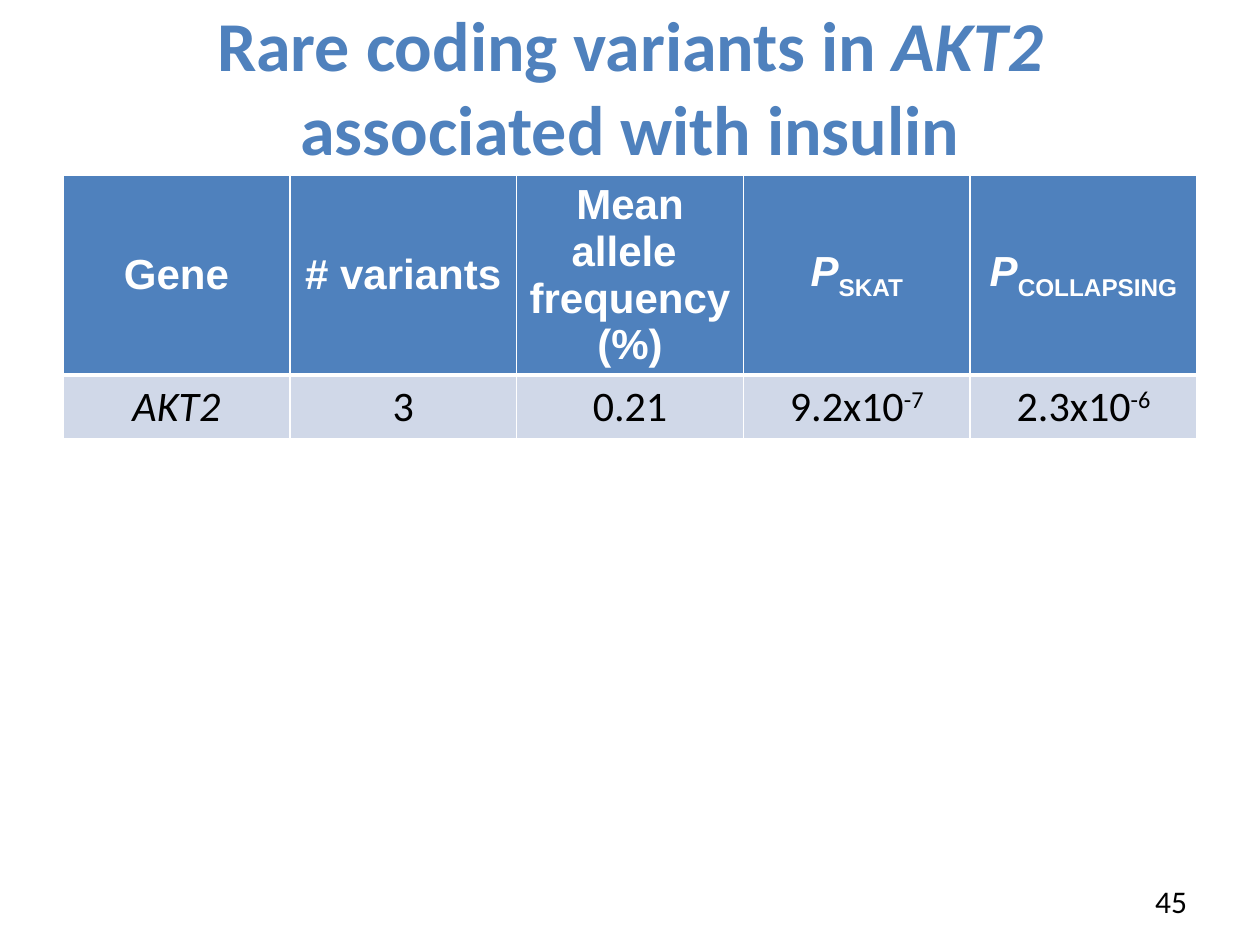
import dataclasses
import typing

import lxml.etree
import pptx
import pptx.dml.color
import pptx.enum.text
import pptx.oxml.ns
import pptx.util

Inches = pptx.util.Inches
ALIGN = pptx.enum.text.PP_ALIGN
MIDDLE = pptx.enum.text.MSO_ANCHOR.MIDDLE

COLORS = {"blue": "4F81BD", "pale": "D0D8E8", "white": "FFFFFF", "black": "000000"}
TITLE_FORMAT = {"name": "Calibri", "size": pptx.util.Pt(40), "bold": True}
HEADER_FORMAT = {"name": "Arial", "size": pptx.util.Pt(24), "bold": True}
BODY_FORMAT = {"name": "Calibri", "size": pptx.util.Pt(24), "bold": False}
NUMBER_FORMAT = {"name": "Calibri", "size": pptx.util.Pt(18)}
HEADER_MARGINS: dict[str, int] = {}
VALUE_MARGINS = {
    "margin_left": Inches(0.07),
    "margin_right": Inches(0.07),
    "margin_top": 0,
    "margin_bottom": 0,
}


@dataclasses.dataclass
class Piece:
    text: str
    italic: bool = False
    baseline: int = 0


@dataclasses.dataclass
class RowStyle:
    fill: str
    text_color: str
    font: dict[str, typing.Any]
    borders: dict[str, int]


Paragraphs = list[list[Piece]]

HEADER_STYLE = RowStyle("blue", "white", HEADER_FORMAT, {"lnL": 1, "lnR": 1, "lnT": 1, "lnB": 3})
BODY_STYLE = RowStyle("pale", "black", BODY_FORMAT, {"lnL": 1, "lnR": 1, "lnT": 3, "lnB": 1})

HEADER: list[Paragraphs] = [
    [[Piece("Gene")]],
    [[Piece("# variants")]],
    [[Piece("Mean allele ")], [Piece("frequency (%)")]],
    [[Piece("P", italic=True), Piece("SKAT", baseline=-25)]],
    [[Piece("P", italic=True), Piece("COLLAPSING", baseline=-25)]],
]
BODY: list[Paragraphs] = [
    [[Piece("AKT2", italic=True)]],
    [[Piece("3")]],
    [[Piece("0.21")]],
    [[Piece("9.2x10"), Piece("-7", baseline=30)]],
    [[Piece("2.3x10"), Piece("-6", baseline=30)]],
]


def set_values(target: typing.Any, values: dict[str, typing.Any]) -> None:
    for name, value in values.items():
        setattr(target, name, value)


def rgb(color: str) -> pptx.dml.color.RGBColor:
    return pptx.dml.color.RGBColor.from_string(COLORS[color])


def write_text(frame, paragraphs: Paragraphs, font: dict, color: str, alignment) -> None:
    for index, pieces in enumerate(paragraphs):
        paragraph = frame.add_paragraph() if index else frame.paragraphs[0]
        paragraph.alignment = alignment
        for piece in pieces:
            run = paragraph.add_run()
            run.text = piece.text
            set_values(run.font, {**font, "italic": piece.italic})
            run.font.color.rgb = rgb(color)
            if piece.baseline:
                run._r.get_or_add_rPr().set("baseline", str(piece.baseline * 1000))


def set_borders(cell, borders: dict[str, int]) -> None:
    qualified = pptx.oxml.ns.qn
    properties = cell._tc.get_or_add_tcPr()
    for index, (side, points) in enumerate(borders.items()):
        line = lxml.etree.Element(qualified(f"a:{side}"), w=str(pptx.util.Pt(points)))
        fill = lxml.etree.SubElement(line, qualified("a:solidFill"))
        lxml.etree.SubElement(fill, qualified("a:srgbClr"), val=COLORS["white"])
        properties.insert(index, line)


def fill_cell(cell, paragraphs: Paragraphs, style: RowStyle, margins: dict) -> None:
    set_values(cell, {"vertical_anchor": MIDDLE, **margins})
    cell.fill.solid()
    cell.fill.fore_color.rgb = rgb(style.fill)
    set_borders(cell, style.borders)
    write_text(cell.text_frame, paragraphs, style.font, style.text_color, ALIGN.CENTER)


def add_variant_table(slide) -> None:
    table = slide.shapes.add_table(
        2, len(HEADER), Inches(0.5), Inches(1.39), Inches(9), Inches(2.07)
    ).table
    for row, height in zip(table.rows, (1.57, 0.5)):
        row.height = Inches(height)
    for column, (heading, value) in enumerate(zip(HEADER, BODY)):
        fill_cell(table.cell(0, column), heading, HEADER_STYLE, HEADER_MARGINS)
        margins = VALUE_MARGINS if column else HEADER_MARGINS
        fill_cell(table.cell(1, column), value, BODY_STYLE, margins)


def add_title(slide) -> None:
    title = slide.shapes.title
    set_values(title, {
        "left": Inches(0.5), "top": Inches(0.05), "width": Inches(9), "height": Inches(1.25),
    })
    set_values(title.text_frame, {
        "vertical_anchor": MIDDLE,
        "word_wrap": True,
        "auto_size": pptx.enum.text.MSO_AUTO_SIZE.NONE,
    })
    pieces = [
        Piece("Rare coding variants in "),
        Piece("AKT2", italic=True),
        Piece(" associated with insulin"),
    ]
    write_text(title.text_frame, [pieces], TITLE_FORMAT, "blue", ALIGN.CENTER)


def add_page_number(slide) -> None:
    box = slide.shapes.add_textbox(Inches(8.02), Inches(6.95), Inches(1.5), Inches(0.4))
    set_values(box.text_frame, {"vertical_anchor": MIDDLE, "word_wrap": True})
    write_text(box.text_frame, [[Piece("45")]], NUMBER_FORMAT, "black", ALIGN.RIGHT)


def main() -> None:
    presentation = pptx.Presentation()
    set_values(presentation, {"slide_width": Inches(10), "slide_height": Inches(7.5)})
    slide = presentation.slides.add_slide(presentation.slide_layouts[5])
    add_variant_table(slide)
    add_title(slide)
    add_page_number(slide)
    presentation.save("out.pptx")


if __name__ == "__main__":
    main()
